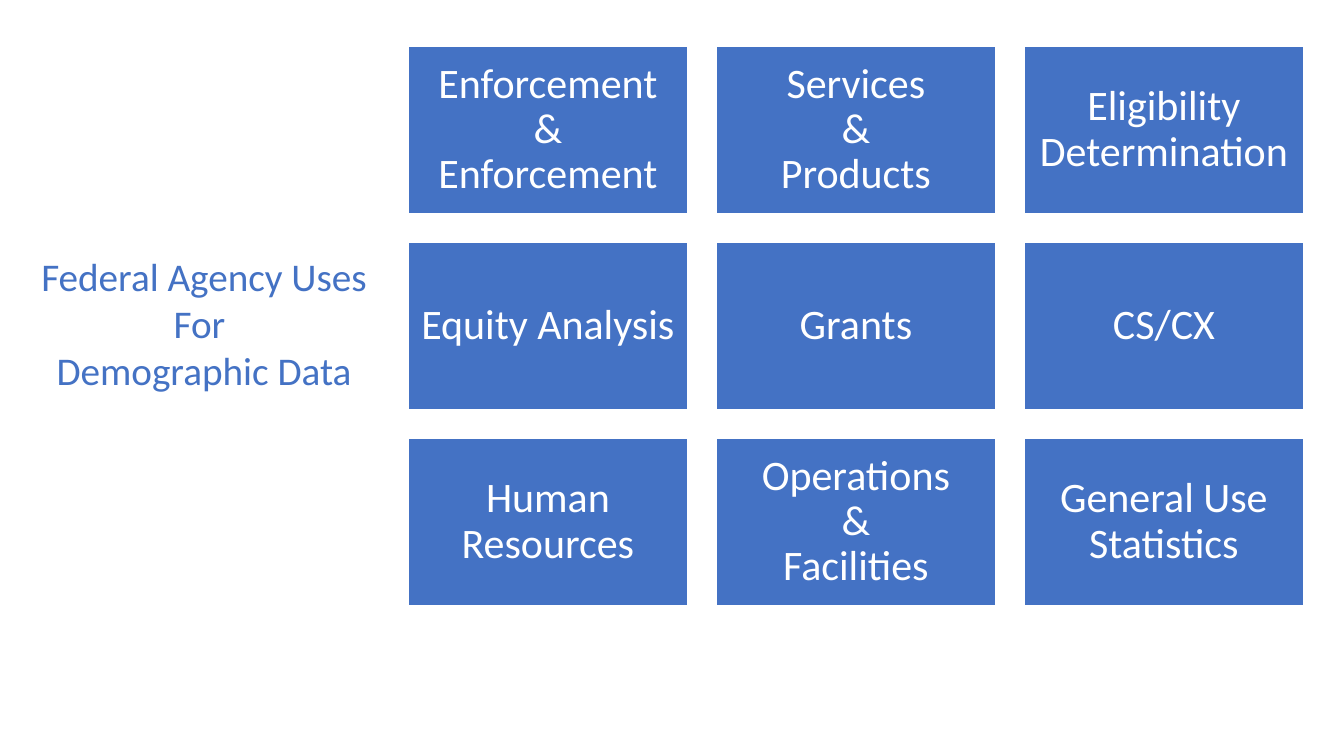
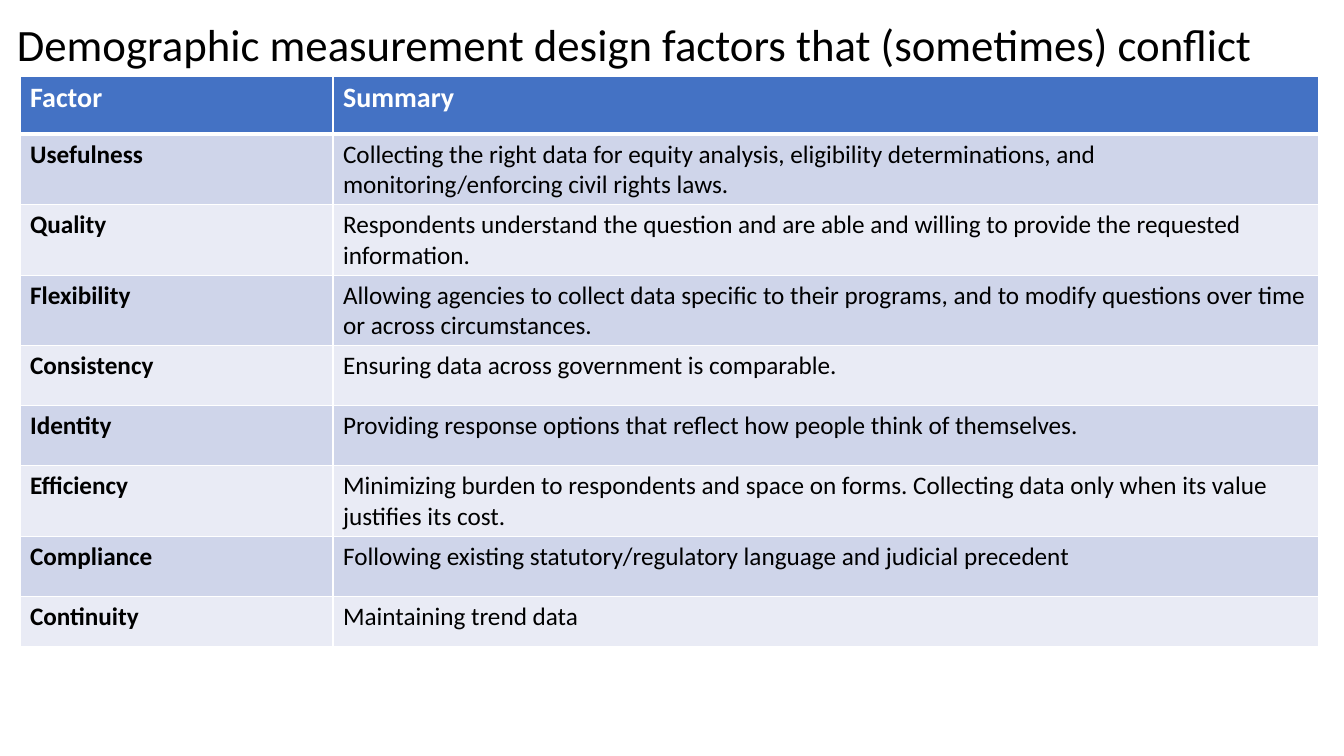
from dataclasses import dataclass

from lxml import etree
from pptx import Presentation
from pptx.dml.color import RGBColor
from pptx.enum.shapes import MSO_SHAPE
from pptx.enum.text import MSO_ANCHOR, PP_ALIGN
from pptx.oxml.ns import qn
from pptx.util import Emu, Pt

RECT = MSO_SHAPE.RECTANGLE
TOP, MIDDLE = MSO_ANCHOR.TOP, MSO_ANCHOR.MIDDLE
LEFT, CENTER = PP_ALIGN.LEFT, PP_ALIGN.CENTER

# Shared look
BLUE = RGBColor(0x44, 0x72, 0xC4)
BAND_DARK = RGBColor(0xCF, 0xD5, 0xEA)
BAND_LIGHT = RGBColor(0xE9, 0xEB, 0xF5)
WHITE = RGBColor(0xFF, 0xFF, 0xFF)
BLACK = RGBColor(0, 0, 0)
FONT = "Calibri"
PX_PER_INCH = 100.8


@dataclass(frozen=True)
class Box:
    x: int
    y: int
    w: int
    h: int

    def emu(self) -> tuple[Emu, ...]:
        return tuple(px(n) for n in (self.x, self.y, self.w, self.h))


@dataclass(frozen=True)
class TextStyle:
    size: int
    color: RGBColor
    bold: bool = False
    align: PP_ALIGN = LEFT
    spacing: float = 1.0


@dataclass(frozen=True)
class Factor:
    name: str
    summary: str


USE_STYLE = TextStyle(30, WHITE, align=CENTER, spacing=0.9)
HEADER_STYLE = TextStyle(20, WHITE, bold=True)
NAME_STYLE = TextStyle(18, BLACK, bold=True)
SUMMARY_STYLE = TextStyle(18, BLACK)

# Grid of uses
TILE = Box(408, 46, 280, 168)
TILE_GAP = 28
COLUMNS = 3
USES = [
    "Enforcement\n&\nEnforcement", "Services\n&\nProducts", "Eligibility Determination",
    "Equity Analysis", "Grants", "CS/CX",
    "Human Resources", "Operations\n&\nFacilities", "General Use Statistics",
]

# Table of factors
COL_WIDTHS = (313, 986)
HEADER_H, ROW_H, LAST_ROW_H = 58, 60, 50
HEADER = Factor("Factor", "Summary")
FACTORS = [
    Factor("Usefulness", "Collecting the right data for equity analysis, eligibility "
           "determinations, and monitoring/enforcing civil rights laws."),
    Factor("Quality", "Respondents understand the question and are able and willing "
           "to provide the requested information."),
    Factor("Flexibility", "Allowing agencies to collect data specific to their programs, "
           "and to modify questions over time or across circumstances."),
    Factor("Consistency", "Ensuring data across government is comparable."),
    Factor("Identity", "Providing response options that reflect how people think of themselves."),
    Factor("Efficiency", "Minimizing burden to respondents and space on forms. "
           "Collecting data only when its value justifies its cost."),
    Factor("Compliance", "Following existing statutory/regulatory language and judicial precedent"),
    Factor("Continuity", "Maintaining trend data"),
]


def px(n: int) -> Emu:
    return Emu(round(n * 914400 / PX_PER_INCH))


def write(tf, text: str, style: TextStyle) -> None:
    p = tf.paragraphs[0]
    p.text = text
    p.alignment = style.align
    p.line_spacing = style.spacing
    for r in p.runs:
        r.font.name = FONT
        r.font.size = Pt(style.size)
        r.font.bold = style.bold
        r.font.color.rgb = style.color


def add_title(s, text: str, box: Box, style: TextStyle, anchor: MSO_ANCHOR) -> None:
    tf = s.shapes.add_textbox(*box.emu()).text_frame
    tf.word_wrap = True
    tf.vertical_anchor = anchor
    write(tf, text, style)


def add_tile(s, text: str, box: Box) -> None:
    sp = s.shapes.add_shape(RECT, *box.emu())
    sp.shadow.inherit = False
    sp.fill.solid()
    sp.fill.fore_color.rgb = BLUE
    sp.line.color.rgb = WHITE
    sp.line.width = Pt(1)
    tf = sp.text_frame
    tf.word_wrap = True
    tf.vertical_anchor = MIDDLE
    tf.margin_left = tf.margin_right = tf.margin_top = tf.margin_bottom = px(12)
    write(tf, text, USE_STYLE)


def add_border(cell, side: str, points: int) -> None:
    ln = etree.SubElement(cell._tc.get_or_add_tcPr(), qn(f"a:ln{side}"), w=str(Pt(points)))
    fill = etree.SubElement(ln, qn("a:solidFill"))
    etree.SubElement(fill, qn("a:srgbClr"), val=str(WHITE))


def fill_cell(cell, text: str, style: TextStyle, color: RGBColor, is_header: bool) -> None:
    write(cell.text_frame, text, style)
    # Borders come before the fill in the cell properties
    for side in "LR":
        add_border(cell, side, 1)
    if is_header:
        add_border(cell, "T", 1)
    add_border(cell, "B", 3 if is_header else 1)
    cell.fill.solid()
    cell.fill.fore_color.rgb = color


def add_factor_table(s, x: int, y: int) -> None:
    rows = [HEADER, *FACTORS]
    heights = [HEADER_H, *[ROW_H] * (len(FACTORS) - 1), LAST_ROW_H]
    box = Box(x, y, sum(COL_WIDTHS), sum(heights))
    table = s.shapes.add_table(len(rows), len(COL_WIDTHS), *box.emu()).table
    for column, width in zip(table.columns, COL_WIDTHS):
        column.width = px(width)
    for i, (factor, height) in enumerate(zip(rows, heights)):
        table.rows[i].height = px(height)
        is_header = i == 0
        if is_header:
            color, styles = BLUE, (HEADER_STYLE, HEADER_STYLE)
        else:
            color = BAND_DARK if i % 2 else BAND_LIGHT
            styles = (NAME_STYLE, SUMMARY_STYLE)
        for j, text in enumerate((factor.name, factor.summary)):
            fill_cell(table.cell(i, j), text, styles[j], color, is_header)


def build_uses(s) -> None:
    add_title(s, "Federal Agency Uses For \nDemographic Data", Box(26, 247, 356, 263),
              TextStyle(28, BLUE, align=CENTER), TOP)
    for i, use in enumerate(USES):
        row, col = divmod(i, COLUMNS)
        add_tile(s, use, Box(TILE.x + col * (TILE.w + TILE_GAP),
                             TILE.y + row * (TILE.h + TILE_GAP), TILE.w, TILE.h))


def build_factors(s) -> None:
    add_factor_table(s, 20, 76)
    add_title(s, "Demographic measurement design factors that (sometimes) conflict",
              Box(7, 11, 1275, 65), TextStyle(32, BLACK), MIDDLE)


def main() -> None:
    prs = Presentation()
    prs.slide_width, prs.slide_height = px(1344), px(756)
    blank = prs.slide_layouts[6]
    for build in (build_uses, build_factors):
        build(prs.slides.add_slide(blank))
    prs.save("out.pptx")


if __name__ == "__main__":
    main()
